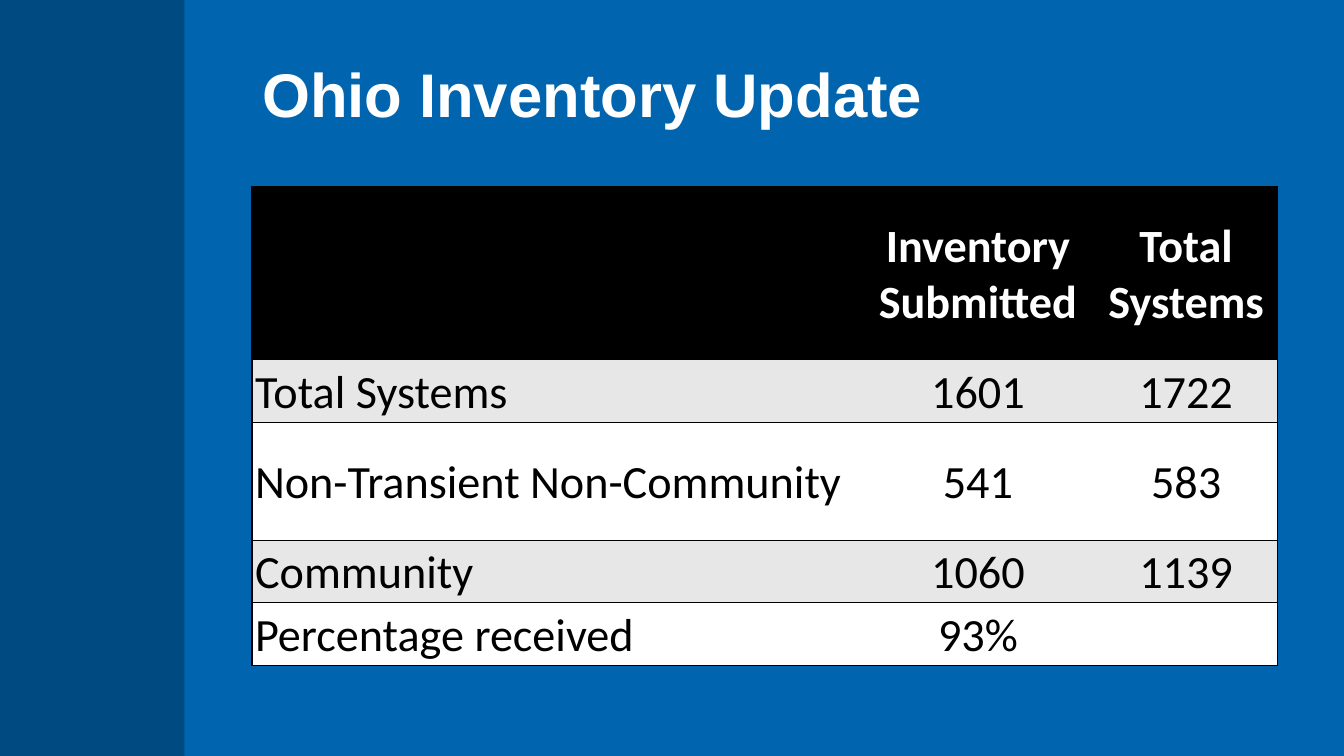
from pptx import Presentation
from pptx import util as u
from pptx.dml.color import RGBColor
from pptx.enum import shapes, text
from pptx.oxml import parse_xml
from pptx.oxml.ns import nsdecls

NAVY, BLUE, BLACK, WHITE, GREY = "004A82", "0065AE", "000000", "FFFFFF", "E7E7E7"
COLUMN_WIDTHS = [6.04, 2.32, 1.81]
ROW_HEIGHTS = [1.72, 0.62, 1.17, 0.62, 0.62]
INVENTORY = [
    ["", "Inventory Submitted", "Total Systems"],
    ["Total Systems", "1601", "1722"],
    ["Non-Transient Non-Community", "541", "583"],
    ["Community", "1060", "1139"],
    ["Percentage received", "93%", ""],
]


def paint(fill, color):
    fill.solid()
    fill.fore_color.rgb = RGBColor.from_string(color)


def add_run(paragraph, words, font, size, color, bold):
    run = paragraph.add_run()
    run.text = words
    run.font.name = font
    run.font.size = u.Pt(size)
    run.font.bold = bold
    run.font.color.rgb = RGBColor.from_string(color)


def add_sidebar(slide):
    sidebar = slide.shapes.add_shape(
        shapes.MSO_SHAPE.RECTANGLE, 0, 0, u.Inches(1.83), u.Inches(7.5))
    sidebar.shadow.inherit = False
    paint(sidebar.fill, NAVY)
    sidebar.line.fill.background()


def add_title(slide, words):
    title = slide.shapes.title
    title.left, title.top = u.Inches(2.5), u.Inches(0.3)
    title.width, title.height = u.Inches(10.17), u.Inches(1.25)
    frame = title.text_frame
    frame.word_wrap = True
    frame.vertical_anchor = text.MSO_ANCHOR.MIDDLE
    frame.paragraphs[0].alignment = text.PP_ALIGN.LEFT
    add_run(frame.paragraphs[0], words, "Arial", 44, WHITE, True)


def set_borders(cell, sides):
    properties = cell._tc.get_or_add_tcPr()
    for side in "LRTB":
        line = (f'<a:solidFill><a:srgbClr val="{BLACK}"/></a:solidFill>'
                if side in sides else "<a:noFill/>")
        properties.append(parse_xml(
            f'<a:ln{side} {nsdecls("a")} w="{u.Pt(1)}">{line}</a:ln{side}>'))


def fill_cell(cell, words, row, column):
    set_borders(cell, ["LTB", "TB", "RTB"][column])
    paint(cell.fill, BLACK if row == 0 else GREY if row % 2 else WHITE)
    cell.vertical_anchor = text.MSO_ANCHOR.MIDDLE
    cell.margin_left = cell.margin_top = cell.margin_right = u.Inches(0.03)
    cell.margin_bottom = 0
    if words:
        paragraph = cell.text_frame.paragraphs[0]
        paragraph.alignment = text.PP_ALIGN.CENTER if column else text.PP_ALIGN.LEFT
        add_run(paragraph, words, "Calibri", 33, BLACK if row else WHITE, row == 0)


def add_inventory(slide):
    inventory = slide.shapes.add_table(
        len(ROW_HEIGHTS), len(COLUMN_WIDTHS), u.Inches(2.5), u.Inches(1.85),
        u.Inches(10.17), u.Inches(4.75)).table
    for column, width in zip(inventory.columns, COLUMN_WIDTHS):
        column.width = u.Inches(width)
    for row, height in zip(inventory.rows, ROW_HEIGHTS):
        row.height = u.Inches(height)
    for row, entries in enumerate(INVENTORY):
        for column, words in enumerate(entries):
            fill_cell(inventory.cell(row, column), words, row, column)


def main():
    deck = Presentation()
    deck.slide_width, deck.slide_height = u.Inches(13.33), u.Inches(7.5)
    slide = deck.slides.add_slide(deck.slide_layouts[5])
    paint(slide.background.fill, BLUE)
    add_sidebar(slide)
    add_title(slide, "Ohio Inventory Update")
    add_inventory(slide)
    deck.save("out.pptx")


if __name__ == "__main__":
    main()
